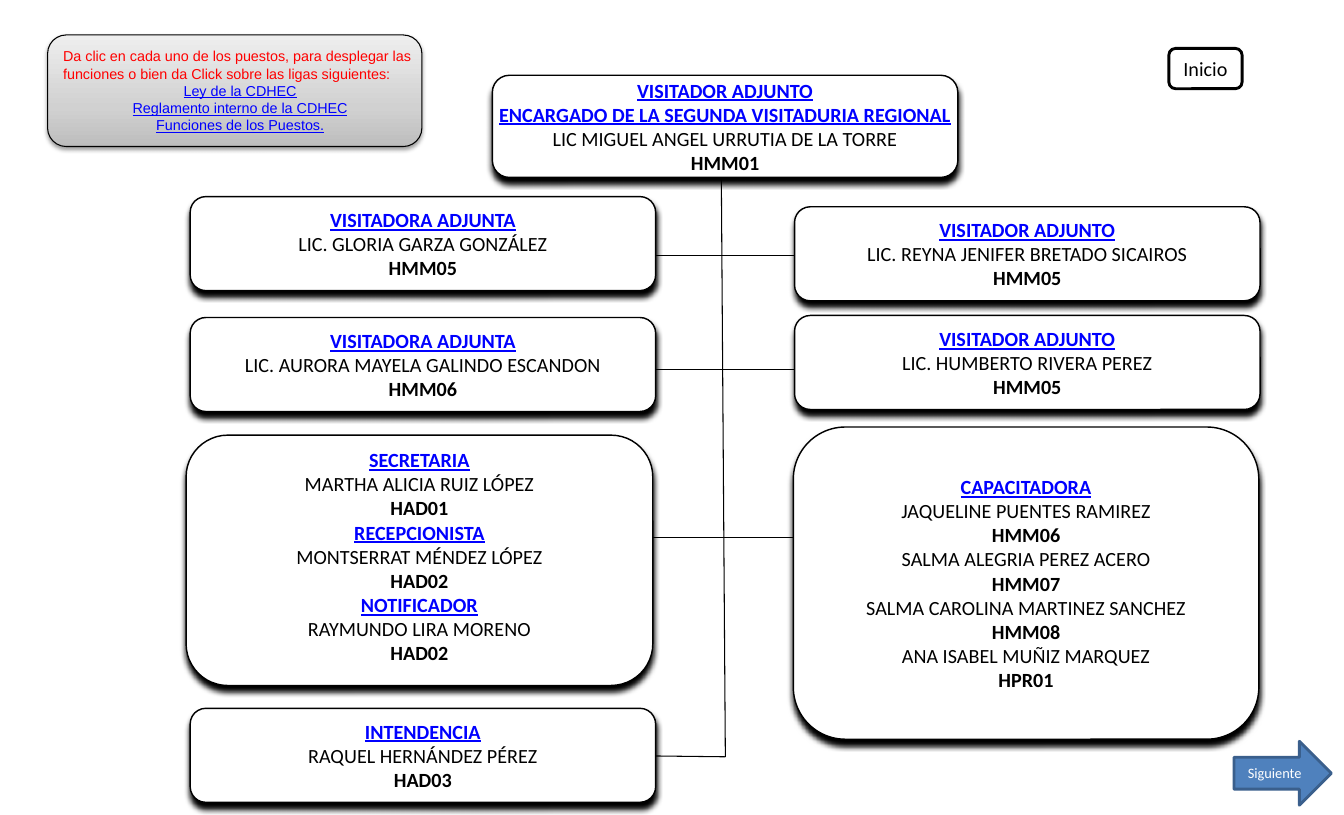
from lxml import etree
from pptx import Presentation
from pptx import util as u
from pptx.dml.color import RGBColor
from pptx.enum import shapes, text
from pptx.oxml import parse_xml
from pptx.oxml.ns import nsdecls, qn

BLACK, WHITE, LINK, RED = "000000", "FFFFFF", "0000FF", "FF0000"
TITLE = {"size": u.Pt(14), "name": "Calibri", "color": LINK, "bold": True, "underline": True}
NAME = {"size": u.Pt(14), "name": "Calibri", "color": BLACK}
CODE = {**NAME, "bold": True}
NOTE = {"size": u.Pt(10), "name": "Arial", "color": RED}
NOTE_LINK = {**NOTE, "color": LINK, "underline": True}
CENTER, LEFT = text.PP_ALIGN.CENTER, text.PP_ALIGN.LEFT

BOX_WIDTH, BOX_HEIGHT = 11.43, 2.31
LEFT_COLUMN, RIGHT_COLUMN = 3.5, 18.34
# Each post: left, top, width, height, extra bottom inset, [(title lines, [(name, code)])]
POSTS = [
    (10.92, 0.99, BOX_WIDTH, 2.51, 0,
     [(["VISITADOR ADJUNTO", "ENCARGADO DE LA SEGUNDA VISITADURIA REGIONAL"],
       [("LIC MIGUEL ANGEL URRUTIA DE LA TORRE", "HMM01")])]),
    (LEFT_COLUMN, 3.97, BOX_WIDTH, BOX_HEIGHT, 0,
     [(["VISITADORA ADJUNTA"], [("LIC. GLORIA GARZA GONZÁLEZ", "HMM05")])]),
    (LEFT_COLUMN, 6.94, BOX_WIDTH, BOX_HEIGHT, 0,
     [(["VISITADORA ADJUNTA"], [("LIC. AURORA MAYELA GALINDO ESCANDON", "HMM06")])]),
    (3.4, 9.83, 11.46, 6.15, 0.2,
     [(["SECRETARIA"], [("MARTHA ALICIA RUIZ LÓPEZ", "HAD01")]),
      (["RECEPCIONISTA"], [("MONTSERRAT MÉNDEZ LÓPEZ", "HAD02")]),
      (["NOTIFICADOR"], [("RAYMUNDO LIRA MORENO", "HAD02")])]),
    (LEFT_COLUMN, 16.54, BOX_WIDTH, BOX_HEIGHT, 0,
     [(["INTENDENCIA"], [("RAQUEL HERNÁNDEZ PÉREZ", "HAD03")])]),
    (RIGHT_COLUMN, 4.22, BOX_WIDTH, BOX_HEIGHT, 0,
     [(["VISITADOR ADJUNTO"], [("LIC. REYNA JENIFER BRETADO SICAIROS", "HMM05")])]),
    (RIGHT_COLUMN, 6.89, BOX_WIDTH, BOX_HEIGHT, 0,
     [(["VISITADOR ADJUNTO"], [("LIC. HUMBERTO RIVERA PEREZ", "HMM05")])]),
    (RIGHT_COLUMN - 0.03, 9.63, BOX_WIDTH, 7.67, 0,
     [(["CAPACITADORA"],
       [("JAQUELINE PUENTES RAMIREZ", "HMM06"), ("SALMA ALEGRIA PEREZ ACERO", "HMM07"),
        ("SALMA CAROLINA MARTINEZ SANCHEZ", "HMM08"), ("ANA ISABEL MUÑIZ MARQUEZ", "HPR01")])]),
]
# Start x, start y, end x, end y
LINES = [(13.54, 5.41, 19.38, 5.41), (13.74, 8.21, 19.56, 8.21), (13.69, 12.35, 19.53, 12.35),
         (16.53, 1.88, 16.64, 17.73), (14.93, 17.71, 16.64, 17.73)]


def color(value):
    return RGBColor.from_string(value)


def add_text(frame, lines):
    """Fill a text frame with (text, alignment, font format) lines."""
    for index, (words, alignment, style) in enumerate(lines):
        paragraph = frame.paragraphs[0] if index == 0 else frame.add_paragraph()
        paragraph.alignment = alignment
        run = paragraph.add_run()
        run.text = words
        for key, value in style.items():
            if key == "color":
                run.font.color.rgb = color(value)
            else:
                setattr(run.font, key, value)


def add_box(slide, kind, box, line, width, fill=None):
    shape = slide.shapes.add_shape(kind, *map(u.Cm, box))
    shape.shadow.inherit = False
    if fill:
        shape.fill.solid()
        shape.fill.fore_color.rgb = color(fill)
    shape.line.color.rgb = color(line)
    shape.line.width = u.Pt(width)
    shape.text_frame.word_wrap = True
    shape.text_frame.vertical_anchor = text.MSO_ANCHOR.MIDDLE
    return shape


def add_shadow(shape, alpha, blur, distance):
    """Drop a black shadow straight down; alpha in percent, lengths in points."""
    shape.element.spPr.find(qn("a:effectLst")).append(parse_xml(
        f'<a:outerShdw {nsdecls("a")} blurRad="{u.Pt(blur)}" dist="{u.Pt(distance)}" '
        f'dir="5400000" rotWithShape="0"><a:srgbClr val="{BLACK}">'
        f'<a:alpha val="{alpha * 1000}"/></a:srgbClr></a:outerShdw>'))


def add_gradient(shape, stops):
    """Fill from bottom to top with (percent, colour) stops."""
    marks = "".join(f'<a:gs pos="{position * 1000}"><a:srgbClr val="{value}"/></a:gs>'
                    for position, value in stops)
    shape.element.spPr.find(qn("a:prstGeom")).addnext(parse_xml(
        f'<a:gradFill {nsdecls("a")} rotWithShape="1"><a:gsLst>{marks}</a:gsLst>'
        '<a:lin ang="16200000" scaled="0"/></a:gradFill>'))


def add_line(slide, *ends):
    line = slide.shapes.add_connector(shapes.MSO_CONNECTOR.STRAIGHT, *map(u.Cm, ends))
    line.line.color.rgb = color(BLACK)
    line.line.width = u.Pt(0.75)
    etree.SubElement(line.element.spPr, qn("a:effectLst"))


def add_post(slide, box, extra_bottom, roles):
    shape = add_box(slide, shapes.MSO_SHAPE.ROUNDED_RECTANGLE, box, BLACK, 1, WHITE)
    add_shadow(shape, 100, 4, 4)
    frame = shape.text_frame
    margins = {"margin_left": 0.43, "margin_right": 0.43,
               "margin_top": 0.23, "margin_bottom": 0.23 + extra_bottom}
    for side, value in margins.items():
        setattr(frame, side, u.Cm(value))
    frame.word_wrap = False
    lines = []
    for titles, people in roles:
        lines += [(title, CENTER, TITLE) for title in titles]
        for name, code in people:
            lines += [(name, CENTER, NAME), (code, CENTER, CODE)]
    add_text(frame, lines)


def add_org_chart(slide, left, top):
    for x1, y1, x2, y2 in LINES:
        add_line(slide, left + x1, top + y1, left + x2, top + y2)
    for x, y, width, height, extra_bottom, roles in POSTS:
        add_post(slide, (left + x, top + y, width, height), extra_bottom, roles)


def add_instructions(slide, left, top, width, height):
    panel = add_box(slide, shapes.MSO_SHAPE.ROUNDED_RECTANGLE,
                    (left, top, width, height), BLACK, 0.75)
    add_gradient(panel, [(0, "BDBDBD"), (35, "D1D1D1"), (100, "EEEEEE")])
    add_shadow(panel, 38, 3.1, 1.6)
    label = slide.shapes.add_textbox(
        *map(u.Cm, (left + 0.13, top + 0.18, width, height - 0.35)))
    label.text_frame.word_wrap = True
    links = ["Ley de la CDHEC", "Reglamento interno de la CDHEC", "Funciones de los Puestos."]
    add_text(label.text_frame, [
        ("Da clic en cada uno de los puestos, para desplegar las funciones "
         "o bien da Click sobre las ligas siguientes:", LEFT, NOTE),
        *[(link, CENTER, NOTE_LINK) for link in links]])


def add_button(slide, kind, box, label, fill, line, style):
    shape = add_box(slide, kind, box, line, 2, fill)
    add_text(shape.text_frame, [(label, CENTER, style)])


def main():
    presentation = Presentation()
    presentation.slide_width, presentation.slide_height = u.Cm(33), u.Cm(20.02)
    slide = presentation.slides.add_slide(presentation.slide_layouts[6])
    add_org_chart(slide, 1.17, 0.86)
    add_instructions(slide, 1.17, 0.86, 9.19, 2.74)
    add_button(slide, shapes.MSO_SHAPE.ROUNDED_RECTANGLE, (28.7, 1.19, 1.8, 0.99),
               "Inicio", WHITE, BLACK, NAME)
    add_button(slide, shapes.MSO_SHAPE.RIGHT_ARROW, (30.3, 18.21, 2.39, 1.57),
               "Siguiente", "4F81BD", "3A5F8C", {**NAME, "size": u.Pt(10), "color": WHITE})
    presentation.save("out.pptx")


if __name__ == "__main__":
    main()
